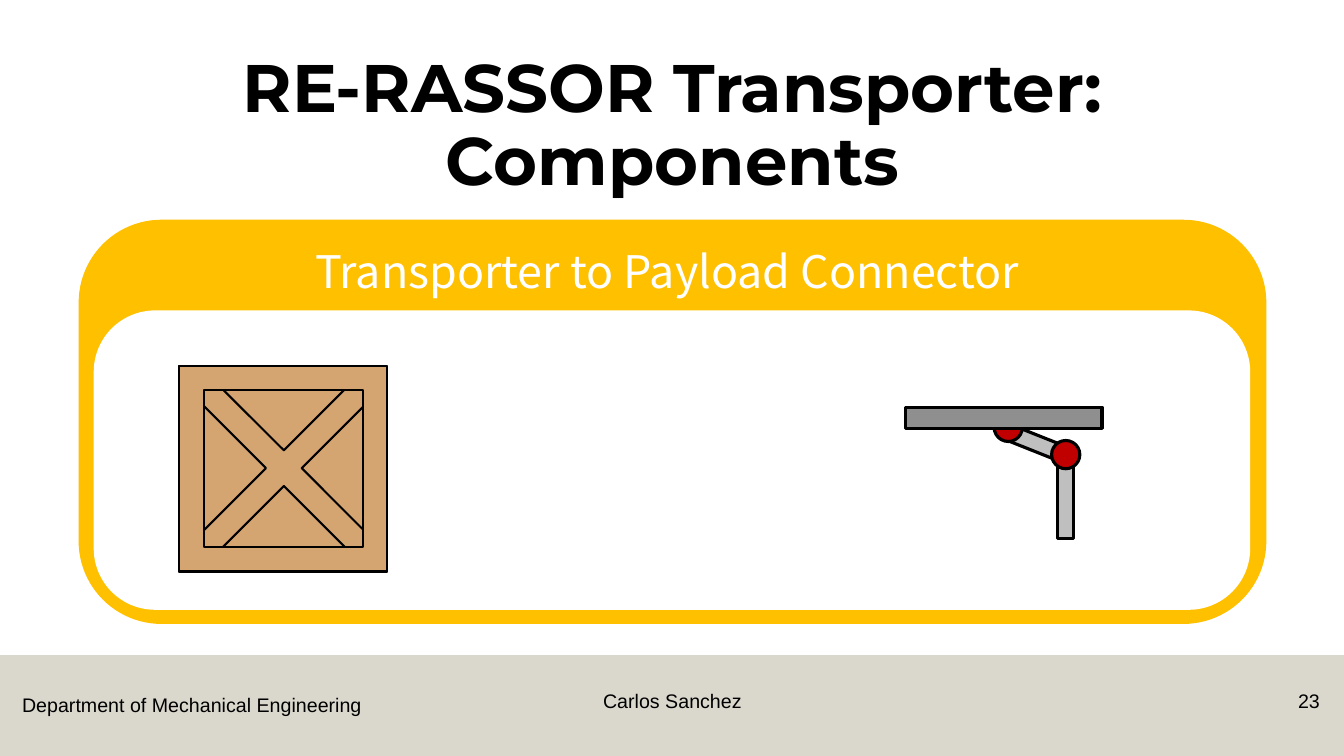
from dataclasses import dataclass

from lxml.etree import SubElement
from pptx import Presentation
from pptx.dml.color import RGBColor
from pptx.enum.shapes import MSO_SHAPE as SHAPE
from pptx.enum.text import MSO_ANCHOR as ANCHOR, MSO_AUTO_SIZE as AUTO_SIZE, PP_ALIGN as ALIGN
from pptx.oxml.ns import qn
from pptx.util import Pt

PX = 9144  # EMU per px, 100 px to the inch


@dataclass(frozen=True)
class Theme:
    black: str = "000000"
    white: str = "FFFFFF"
    footer: str = "B7B09C"
    gold: str = "FFC000"
    link: str = "BFBFBF"
    joint: str = "C00000"
    plate: str = "8F8F8F"
    wood: str = "D5A571"
    title_font: str = "Montserrat"
    panel_font: str = "Noto Sans CJK JP"
    footer_font: str = "Arial"
    title_size: int = 48
    panel_size: int = 32
    footer_size: int = 14
    arm_line: float = 2.25
    crate_line: float = 1.5


THEME = Theme()


def px(*lengths):
    return [length * PX for length in lengths]


def paint(sp, fill, line_width=None):
    sp.shadow.inherit = False
    sp.fill.solid()
    sp.fill.fore_color.rgb = RGBColor.from_string(fill)
    if line_width:
        sp.line.color.rgb = RGBColor.from_string(THEME.black)
        sp.line.width = Pt(line_width)
    else:
        sp.line.fill.background()
    return sp


def add_shape(shapes, kind, box, fill, line_width=None, rotation=0, adj=None):
    sp = paint(shapes.add_shape(kind, *px(*box)), fill, line_width)
    sp.rotation = rotation
    if adj is not None:
        sp.adjustments[0] = adj
    return sp


def write(sp, text, font, size, color=THEME.black, align=ALIGN.LEFT, bold=False, wrap=True):
    tf = sp.text_frame
    tf.text = text
    tf.word_wrap = wrap
    tf.auto_size = AUTO_SIZE.NONE
    tf.vertical_anchor = ANCHOR.TOP
    p = tf.paragraphs[0]
    p.alignment = align
    f = p.runs[0].font
    f.name, f.size, f.bold = font, Pt(size), bold
    f.color.rgb = RGBColor.from_string(color)
    return tf


def add_title(slide, text):
    title = slide.shapes.title
    title.left, title.top, title.width, title.height = px(92, 49, 1150, 109)
    tf = write(title, text, THEME.title_font, THEME.title_size, align=ALIGN.CENTER, bold=True)
    tf.paragraphs[0].line_spacing = 0.9


def add_footer(slide):
    band = add_shape(slide.shapes, SHAPE.RECTANGLE, (0, 650, 1333, 100), THEME.footer)
    SubElement(band.fill._xPr.find(".//" + qn("a:srgbClr")), qn("a:alpha"), val="50000")
    for text, box, align, wrap in (
        ("Department of Mechanical Engineering", (12, 683, 359, 34), ALIGN.LEFT, False),
        ("Carlos Sanchez", (442, 679, 450, 40), ALIGN.CENTER, True),
        ("23", (1242, 679, 77, 40), ALIGN.RIGHT, True),
    ):
        write(slide.shapes.add_textbox(*px(*box)), text, THEME.footer_font,
              THEME.footer_size, align=align, wrap=wrap)


def add_panel(slide, heading):
    frame = add_shape(slide.shapes, SHAPE.ROUNDED_RECTANGLE, (78, 218, 1178, 401),
                      THEME.gold, adj=0.205)
    tf = write(frame, heading, THEME.panel_font, THEME.panel_size, THEME.white, ALIGN.CENTER)
    tf.margin_top = 0
    add_shape(slide.shapes, SHAPE.ROUNDED_RECTANGLE, (93, 308, 1147, 297),
              THEME.white, adj=0.205)


def add_connector_arm(slide):
    """Draw the two-link arm that carries the payload plate."""
    arm = slide.shapes.add_group_shape().shapes
    for kind, box, fill, rotation in (
        (SHAPE.RECTANGLE, (1020, 405, 16, 70), THEME.link, 111.7),
        (SHAPE.RECTANGLE, (1049, 449, 16, 85), THEME.link, 0),
        (SHAPE.OVAL, (1043, 437, 28, 28), THEME.joint, 0),
        (SHAPE.OVAL, (986, 410, 28, 28), THEME.joint, 0),
        (SHAPE.RECTANGLE, (985, 317, 21, 195), THEME.plate, 90),
    ):
        add_shape(arm, kind, box, fill, THEME.arm_line, rotation)


def add_crate(slide):
    crate = slide.shapes.add_group_shape().shapes
    left, top, width, height = box = (178, 363, 206, 204)
    right, bottom = left + width, top + height
    rim = 24
    add_shape(crate, SHAPE.RECTANGLE, box, THEME.wood, THEME.crate_line)
    add_shape(crate, SHAPE.CROSS, (168, 351, 227, 227), THEME.wood, THEME.crate_line, 45, 0.445)
    border = crate.build_freeform(left + rim, top + rim, scale=PX)
    border.add_line_segments([(left + rim, bottom - rim), (right - rim, bottom - rim),
                              (right - rim, top + rim)])
    border.move_to(left, top)
    border.add_line_segments([(right, top), (right, bottom), (left, bottom)])
    paint(border.convert_to_shape(), THEME.wood, THEME.crate_line)


def main():
    prs = Presentation()
    prs.slide_width, prs.slide_height = px(1333, 750)
    slide = prs.slides.add_slide(prs.slide_layouts.get_by_name("Title Only"))
    add_footer(slide)
    add_title(slide, "RE-RASSOR Transporter: Components")
    add_panel(slide, "Transporter to Payload Connector ")
    add_connector_arm(slide)
    add_crate(slide)
    prs.save("out.pptx")


if __name__ == "__main__":
    main()
